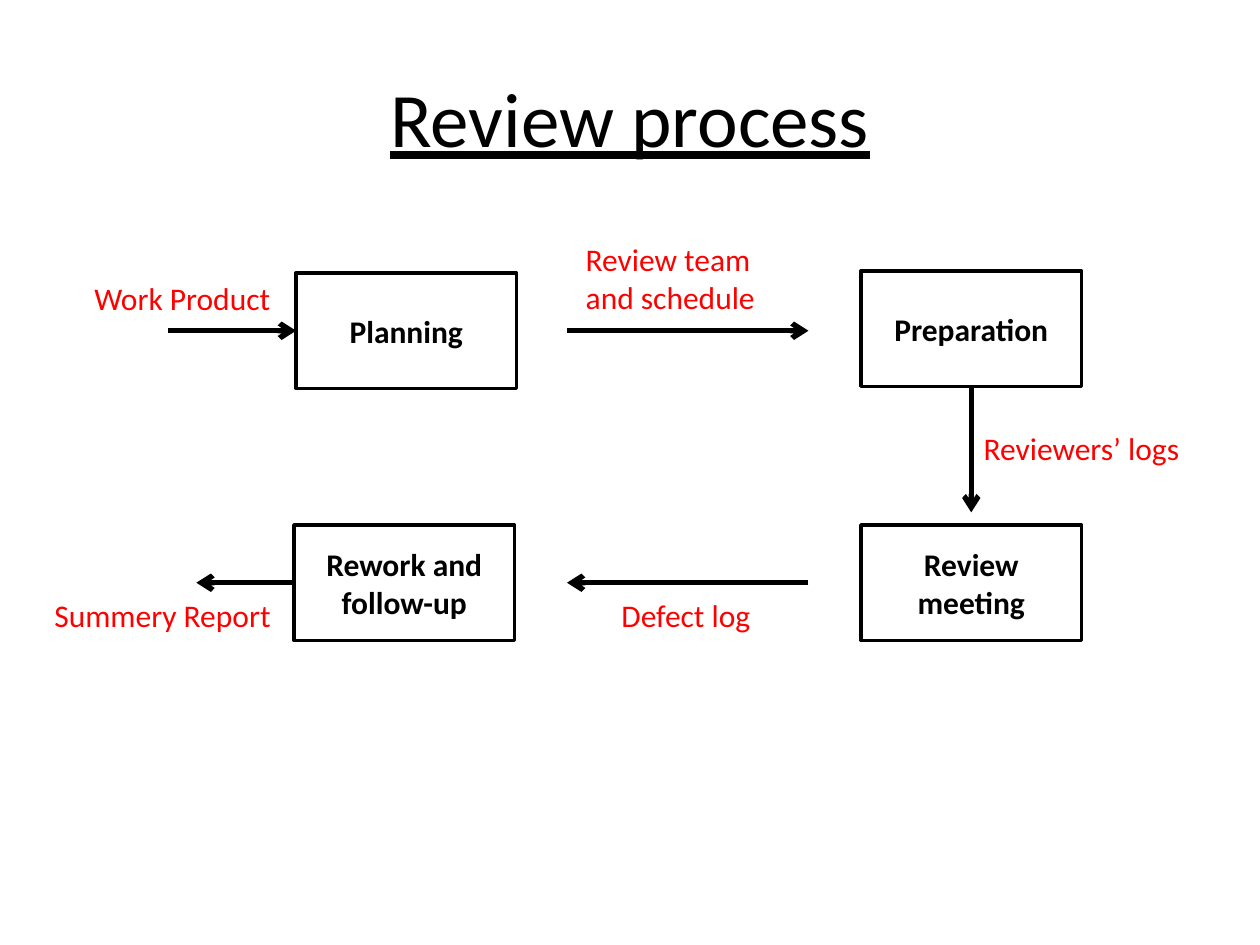
import pptx
import pptx.dml.color
import pptx.enum.shapes
import pptx.enum.text
import pptx.oxml
import pptx.oxml.ns
import pptx.util

COLUMNS, ROWS = 120, 90
BLACK, RED = "000000", "FF0000"
LEFT, BOTTOM = 1, 2
ALIGN = pptx.enum.text.PP_ALIGN
ANCHOR = pptx.enum.text.MSO_ANCHOR


def color(value):
    return pptx.dml.color.RGBColor.from_string(value)


def add_child(parent, tag, **values):
    element = pptx.oxml.parse_xml(f"<{tag} {pptx.oxml.ns.nsdecls('a')}/>")
    for name, value in values.items():
        element.set(name, value)
    parent.append(element)


class ReviewSlide:
    title_format = {"size": pptx.util.Pt(44), "underline": True}
    box_format = {"size": pptx.util.Pt(18), "bold": True}
    label_format = {"size": pptx.util.Pt(18)}

    def __init__(self, presentation):
        self.column = presentation.slide_width / COLUMNS
        self.row = presentation.slide_height / ROWS
        self.slide = presentation.slides.add_slide(presentation.slide_layouts[5])

    def area(self, left, top, width, height):
        return (round(left * self.column), round(top * self.row),
                round(width * self.column), round(height * self.row))

    def set_text(self, shape, text, values, ink, align, anchor):
        frame = shape.text_frame
        frame.word_wrap = True
        frame.vertical_anchor = anchor
        paragraph = frame.paragraphs[0]
        paragraph.alignment = align
        run = paragraph.add_run()
        run.text = text
        run.font.color.rgb = color(ink)
        for name, value in {"name": "Calibri", **values}.items():
            setattr(run.font, name, value)

    def title(self, text, *place):
        shape = self.slide.shapes.title
        shape.left, shape.top, shape.width, shape.height = self.area(*place)
        self.set_text(shape, text, self.title_format, BLACK, ALIGN.CENTER, ANCHOR.MIDDLE)

    def box(self, text, left, top):
        shape = self.slide.shapes.add_shape(
            pptx.enum.shapes.MSO_SHAPE.RECTANGLE, *self.area(left, top, 21, 11))
        shape.shadow.inherit = False
        shape.fill.background()
        shape.line.color.rgb = color(BLACK)
        shape.line.width = pptx.util.Pt(2)
        self.set_text(shape, text, self.box_format, BLACK, ALIGN.CENTER, ANCHOR.MIDDLE)
        return shape

    def label(self, text, left, top, width, height=4.8):
        shape = self.slide.shapes.add_textbox(*self.area(left, top, width, height))
        self.set_text(shape, text, self.label_format, RED, ALIGN.LEFT, ANCHOR.TOP)
        shape.text_frame.auto_size = pptx.enum.text.MSO_AUTO_SIZE.SHAPE_TO_FIT_TEXT

    def arrow(self, start, end, begin=None, finish=None):
        connector = self.slide.shapes.add_connector(
            pptx.enum.shapes.MSO_CONNECTOR.STRAIGHT, *self.area(*start, *end))
        if begin:
            connector.begin_connect(*begin)
        if finish:
            connector.end_connect(*finish)
        connector.line.color.rgb = color(BLACK)
        connector.line.width = pptx.util.Pt(3)
        properties = connector.element.spPr
        add_child(properties.get_or_add_ln(), "a:tailEnd", type="arrow")
        add_child(properties, "a:effectLst")


def main():
    presentation = pptx.Presentation()
    presentation.slide_width = pptx.util.Inches(10)
    presentation.slide_height = pptx.util.Inches(7.5)
    review = ReviewSlide(presentation)
    review.title("Review process", 6, 3.6, 108, 15)

    planning = review.box("Planning", 28.2, 26)
    rework = review.box("Rework and follow-up", 28, 50)
    review.box("Review meeting", 82, 50)
    preparation = review.box("Preparation", 82, 25.8)

    review.arrow((16, 31.5), (28.2, 31.5), finish=(planning, LEFT))
    review.arrow((54, 31.5), (77, 31.5))
    review.arrow((28, 55.5), (18.7, 55.5), begin=(rework, LEFT))
    review.arrow((92.5, 36.8), (92.5, 48.8), begin=(preparation, BOTTOM))
    review.arrow((77, 55.5), (54, 55.5))

    review.label("Work Product", 7.8, 26, 20)
    review.label("Review team and schedule", 54.6, 22.3, 20, 8.5)
    review.label("Reviewers’ logs", 92.5, 40.3, 21.5)
    review.label("Defect log", 58, 56.2, 21.5)
    review.label("Summery Report", 4, 56.2, 24.2)
    presentation.save("out.pptx")


if __name__ == "__main__":
    main()
